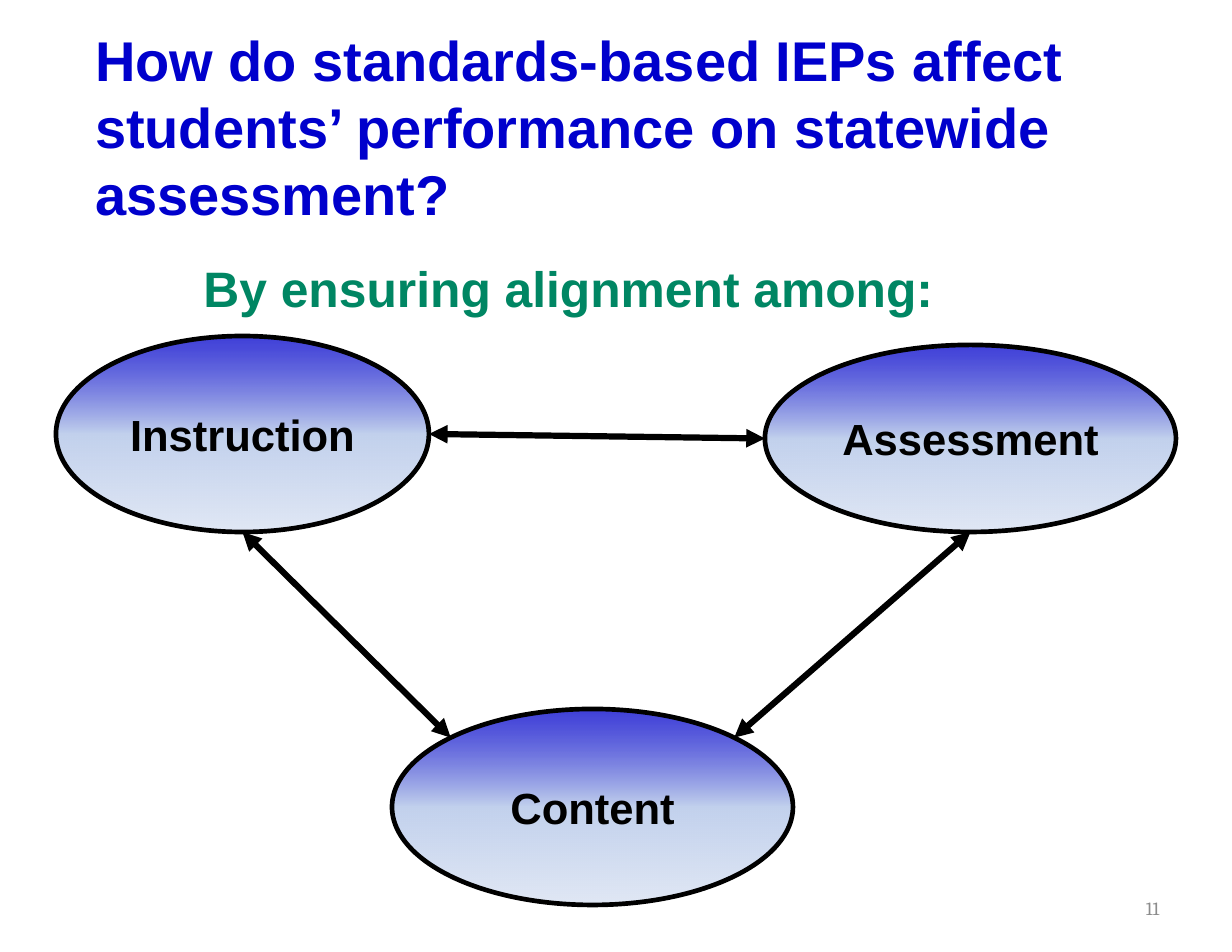
from dataclasses import dataclass
from math import cos, radians, sin

from lxml import etree
from pptx import Presentation
from pptx.dml.color import RGBColor
from pptx.enum.shapes import MSO_CONNECTOR, MSO_SHAPE
from pptx.enum.text import MSO_ANCHOR, PP_ALIGN
from pptx.oxml.ns import qn
from pptx.util import Inches, Pt

OVAL = MSO_SHAPE.OVAL
STRAIGHT = MSO_CONNECTOR.STRAIGHT
TOP, MIDDLE = MSO_ANCHOR.TOP, MSO_ANCHOR.MIDDLE
LEFT, CENTER, RIGHT = PP_ALIGN.LEFT, PP_ALIGN.CENTER, PP_ALIGN.RIGHT


@dataclass(frozen=True)
class Theme:
    heading_font: str = "Arial"
    number_font: str = "Cambria"
    title: str = "0000CC"
    subtitle: str = "008663"
    ink: str = "000000"
    number: str = "8C8C8C"
    # position %, colour, opacity %
    gradient: tuple = ((0, "0000CC", 75), (50, "C2D1ED", 100), (100, "E1E8F5", 100))
    title_size: int = 36
    subtitle_size: int = 32
    label_size: int = 28
    number_size: int = 12
    outline: int = 3
    arrow: int = 4


THEME = Theme()


def write(frame, text, size, color, align, anchor=MIDDLE, font=THEME.heading_font, bold=True):
    frame.text = text
    frame.vertical_anchor = anchor
    para = frame.paragraphs[0]
    para.alignment = align
    span = para.runs[0]
    span.font.name = font
    span.font.size = Pt(size)
    span.font.bold = bold
    span.font.color.rgb = RGBColor.from_string(color)


def add_text(page, box, *args, **style):
    frame = page.shapes.add_textbox(*map(Inches, box)).text_frame
    frame.word_wrap = True
    write(frame, *args, **style)


def fill_gradient(shape):
    """Fill from top to bottom with the theme's three stops."""
    shape.fill.gradient()
    shape.fill.gradient_angle = 270
    stops = shape._element.spPr.find(".//" + qn("a:gsLst"))
    for stop in list(stops):
        stops.remove(stop)
    for position, color, opacity in THEME.gradient:
        stop = etree.SubElement(stops, qn("a:gs"), pos=str(position * 1000))
        tint = etree.SubElement(stop, qn("a:srgbClr"), val=color)
        if opacity < 100:
            etree.SubElement(tint, qn("a:alpha"), val=str(opacity * 1000))


def add_oval(page, box, label):
    oval = page.shapes.add_shape(OVAL, *map(Inches, box))
    oval.shadow.inherit = False
    fill_gradient(oval)
    oval.line.color.rgb = RGBColor.from_string(THEME.ink)
    oval.line.width = Pt(THEME.outline)
    write(oval.text_frame, label, THEME.label_size, THEME.ink, CENTER)
    oval.text_frame.word_wrap = False


def rim_point(box, degrees):
    """Point on the oval's rim, clockwise from its right end."""
    left, top, width, height = box
    angle = radians(degrees)
    return (left + width / 2 * (1 + cos(angle)),
            top + height / 2 * (1 + sin(angle)))


def add_double_arrow(page, start, end):
    arrow = page.shapes.add_connector(STRAIGHT, *map(Inches, start + end))
    arrow.line.color.rgb = RGBColor.from_string(THEME.ink)
    arrow.line.width = Pt(THEME.arrow)
    line = arrow.line._get_or_add_ln()
    for tip in ("a:headEnd", "a:tailEnd"):
        etree.SubElement(line, qn(tip), type="triangle")
    etree.SubElement(arrow._element.spPr, qn("a:effectLst"))


def add_alignment_diagram(page, ovals, links):
    for label, box in ovals.items():
        add_oval(page, box, label)
    for start, start_angle, end, end_angle in links:
        add_double_arrow(page, rim_point(ovals[start], start_angle),
                         rim_point(ovals[end], end_angle))


def main():
    deck = Presentation()
    deck.slide_width, deck.slide_height = Inches(11), Inches(8.5)
    page = deck.slides.add_slide(deck.slide_layouts[6])

    add_text(page, (0.75, 0, 9.38, 2.25),
             "How do standards-based IEPs affect students’ performance on statewide assessment?",
             THEME.title_size, THEME.title, LEFT)
    ovals = {
        "Instruction": (0.5, 3, 3.33, 1.75),
        "Assessment": (6.83, 3.08, 3.67, 1.67),
        "Content": (3.5, 6.33, 3.58, 1.75),
    }
    links = [
        ("Instruction", 0, "Assessment", 180),
        ("Instruction", 90, "Content", 225),
        ("Content", 315, "Assessment", 90),
    ]
    add_alignment_diagram(page, ovals, links)
    add_text(page, (0.83, 2.25, 8.5, 0.64), "By ensuring alignment among:",
             THEME.subtitle_size, THEME.subtitle, CENTER, anchor=TOP)
    add_text(page, (7.88, 7.88, 2.57, 0.45), "11", THEME.number_size, THEME.number,
             RIGHT, font=THEME.number_font, bold=False)
    deck.save("out.pptx")


if __name__ == "__main__":
    main()
